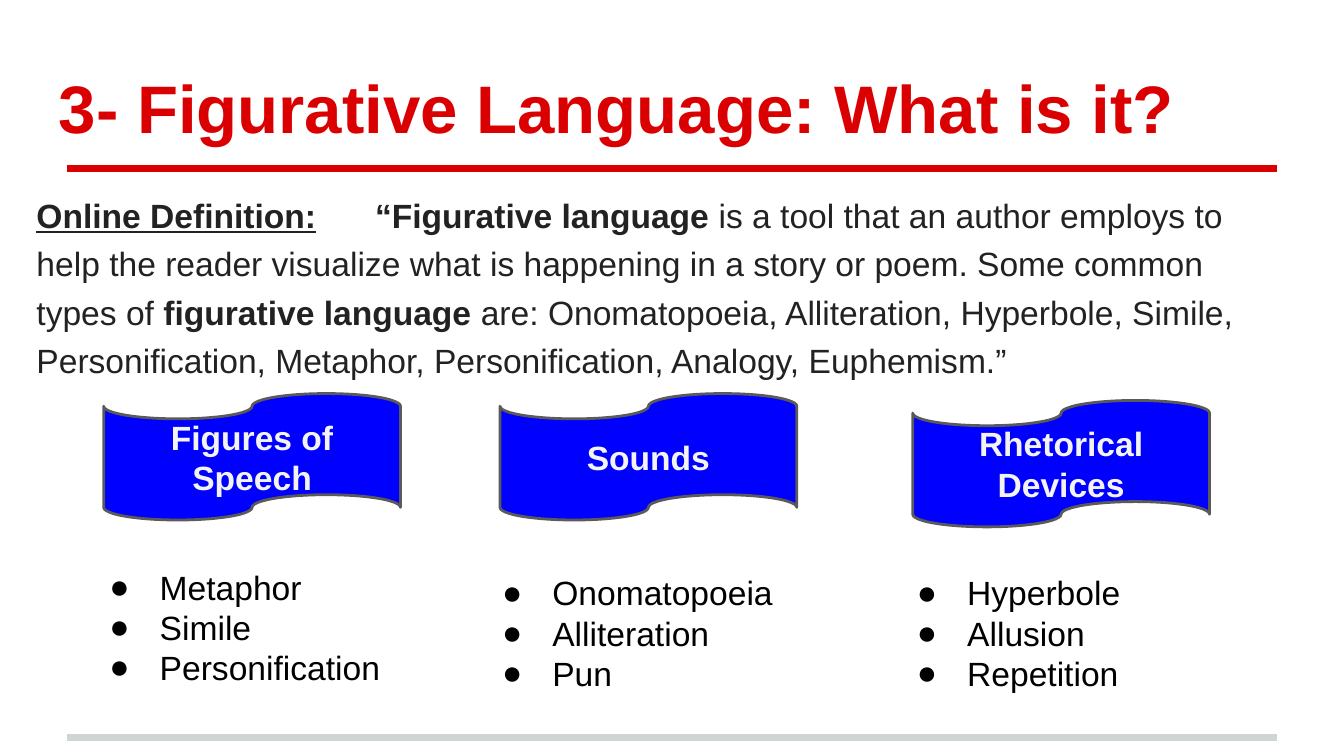
from lxml.etree import SubElement
from pptx import Presentation
from pptx.dml.color import RGBColor
from pptx.enum.shapes import MSO_CONNECTOR, MSO_SHAPE
from pptx.enum.text import MSO_ANCHOR as Anchor, PP_ALIGN as Align
from pptx.oxml.ns import qn
from pptx.util import Cm, Pt

COLORS = {"red": "DA0002", "grey": "CFD4D4", "tape": "0000FF", "outline": "5B595A",
          "label": "F3F3F3", "body": "222222", "black": "000000"}
FONT = "Arial"
INSET = 0.25
TAPE_SIZE = (5.61, 2.39)
LIST_SIZE = (6.53, 3.05)

# heading, tape corner, list corner, items
COLUMNS = [
    ("Figures of Speech", (1.96, 7.44), (1.5, 10.46), ["Metaphor", "Simile", "Personification"]),
    ("Sounds", (9.45, 7.44), (8.92, 10.57), ["Onomatopoeia", "Alliteration", "Pun"]),
    ("Rhetorical Devices", (17.25, 7.57), (16.76, 10.57), ["Hyperbole", "Allusion", "Repetition"]),
]
DEFINITION = [
    ("Online Definition:", {"bold": True, "underline": True}),
    ("\t“Figurative language", {"bold": True}),
    (" is a tool that an author employs to help the reader visualize what is happening "
     "in a story or poem. Some common types of ", {}),
    ("figurative language", {"bold": True}),
    (" are: Onomatopoeia, Alliteration, Hyperbole, Simile, Personification, Metaphor, "
     "Personification, Analogy, Euphemism.”", {}),
]


def rgb(name):
    return RGBColor.from_string(COLORS[name])


def set_frame(shape, anchor):
    frame = shape.text_frame
    values = {"word_wrap": True, "vertical_anchor": anchor}
    for side in ("left", "top", "right", "bottom"):
        values[f"margin_{side}"] = Cm(INSET)
    for name, value in values.items():
        setattr(frame, name, value)
    return frame


def add_text_box(page, box, anchor=Anchor.TOP):
    return set_frame(page.shapes.add_textbox(*map(Cm, box)), anchor)


def add_span(para, text, color, size=18, **styles):
    span = para.add_run()
    span.text = text
    for name, value in {"name": FONT, "size": Pt(size), **styles}.items():
        setattr(span.font, name, value)
    span.font.color.rgb = rgb(color)


def add_rule(page, left, right, y, color):
    rule = page.shapes.add_connector(MSO_CONNECTOR.STRAIGHT, Cm(left), Cm(y), Cm(right), Cm(y))
    rule.line.color.rgb = rgb(color)
    rule.line.width = Pt(4)
    SubElement(rule._element.spPr, qn("a:effectLst"))


def add_title(page, box):
    para = add_text_box(page, box, Anchor.BOTTOM).paragraphs[0]
    add_span(para, "3- Figurative Language: What is it?", "red", 36, bold=True)


def add_definition(page, box):
    para = add_text_box(page, box).paragraphs[0]
    para.line_spacing = 1.2
    tabs = SubElement(para._p.get_or_add_pPr(), qn("a:tabLst"))
    SubElement(tabs, qn("a:tab"), pos=str(Cm(6.4)), algn="l")
    for text, styles in DEFINITION:
        add_span(para, text, "body", **styles)


def add_tape(page, box, heading):
    tape = page.shapes.add_shape(MSO_SHAPE.FLOWCHART_PUNCHED_TAPE, *map(Cm, box))
    tape.shadow.inherit = False
    tape.fill.solid()
    tape.fill.fore_color.rgb = rgb("tape")
    tape.line.color.rgb = rgb("outline")
    tape.line.width = Pt(1.5)
    para = set_frame(tape, Anchor.MIDDLE).paragraphs[0]
    para.alignment = Align.CENTER
    add_span(para, heading, "label", bold=True)


def add_bullet_list(page, box, items):
    frame = add_text_box(page, box)
    for index, item in enumerate(items):
        para = frame.add_paragraph() if index else frame.paragraphs[0]
        props = para._p.get_or_add_pPr()
        props.set("marL", str(Cm(1.27)))
        props.set("indent", str(Cm(-0.95)))
        bullet_color = SubElement(props, qn("a:buClr"))
        SubElement(bullet_color, qn("a:srgbClr"), val=COLORS["black"])
        SubElement(props, qn("a:buFont"), typeface=FONT)
        SubElement(props, qn("a:buChar"), char="●")
        add_span(para, item, "black")


def main():
    deck = Presentation()
    deck.slide_width, deck.slide_height = Cm(25.4), Cm(14.29)
    page = deck.slides.add_slide(deck.slide_layouts[6])
    for y, color in ((13.94, "grey"), (3.18, "red")):
        add_rule(page, 1.27, 24.13, y, color)
    add_title(page, (0.86, 0.64, 22.86, 2.39))
    for heading, tape_corner, list_corner, items in COLUMNS:
        add_tape(page, tape_corner + TAPE_SIZE, heading)
        add_bullet_list(page, list_corner + LIST_SIZE, items)
    add_definition(page, (0.44, 3.28, 23.9, 1.96))
    deck.save("out.pptx")


if __name__ == "__main__":
    main()
